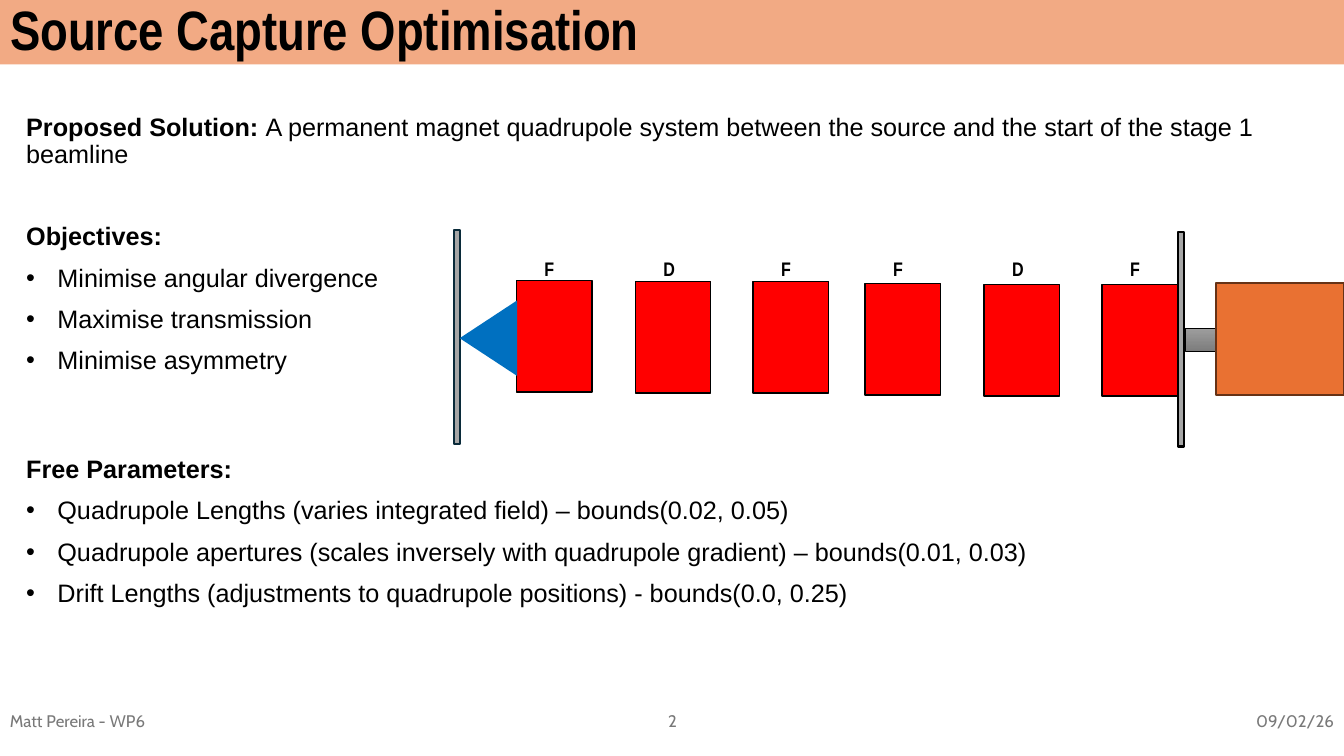
from dataclasses import dataclass
from typing import Any

import pptx
import pptx.dml.color
import pptx.enum.shapes
import pptx.enum.text
import pptx.oxml
import pptx.oxml.ns
import pptx.util

Inches = pptx.util.Inches
Pt = pptx.util.Pt
ALIGN = pptx.enum.text.PP_ALIGN
ANCHOR = pptx.enum.text.MSO_ANCHOR
SHAPE = pptx.enum.shapes.MSO_SHAPE


@dataclass(frozen=True)
class Theme:
    band: str = "F2AA84"
    ink: str = "000000"
    muted: str = "797979"
    magnet: str = "FF0000"
    beam: str = "0070C0"
    screen: str = "A6A6A6"
    screen_edge: str = "092A39"
    stage: str = "E97132"
    stage_edge: str = "663216"
    pipe: tuple[str, str] = ("9D9D9D", "7C7C7C")
    body_font: str = "Arial"
    narrow_font: str = "Arial Narrow"
    footer_font: str = "Cabin"
    title_size: float = 39.6
    body_size: float = 18
    label_size: float = 14
    footer_size: float = 12


@dataclass(frozen=True)
class Frame:
    left: float
    top: float
    width: float
    height: float

    def lengths(self) -> list[int]:
        return [Inches(v) for v in (self.left, self.top, self.width, self.height)]


@dataclass(frozen=True)
class Part:
    frame: Frame
    fill: str | tuple[str, str]
    line: str | None = None
    weight: float = 1
    kind: Any = SHAPE.RECTANGLE
    rotation: float = 0


@dataclass(frozen=True)
class Magnet:
    label: str
    left: float
    top: float


@dataclass(frozen=True)
class Section:
    heading: str
    detail: str
    points: tuple[str, ...]
    gap: float


@dataclass(frozen=True)
class Footer:
    text: str
    frame: Frame
    align: Any


THEME = Theme()
TITLE_FRAME = Frame(0, 0, 13.33, 0.64)
BODY_FRAME = Frame(0.16, 1.09, 12.47, 5.31)
POINT_GAP = 10
POINT_INDENT = 0.31

SECTIONS = (
    Section("Proposed Solution: ",
            "A permanent magnet quadrupole system between the source and "
            "the start of the stage 1 beamline", (), 0),
    Section("Objectives:", "",
            ("Minimise angular divergence", "Maximise transmission",
             "Minimise asymmetry"), 39),
    Section("Free Parameters:", "",
            ("Quadrupole Lengths (varies integrated field) – bounds(0.02, 0.05)",
             "Quadrupole apertures (scales inversely with quadrupole gradient)"
             " – bounds(0.01, 0.03)",
             "Drift Lengths (adjustments to quadrupole positions)"
             " - bounds(0.0, 0.25)"), 58.5),
)
MAGNETS = (
    Magnet("F", 5.12, 2.78), Magnet("D", 6.3, 2.79), Magnet("F", 7.47, 2.79),
    Magnet("F", 8.58, 2.81), Magnet("D", 9.76, 2.82), Magnet("F", 10.93, 2.82),
)
SCREENS = (
    Part(Frame(4.5, 2.28, 0.06, 2.13), THEME.screen, THEME.screen_edge, 1.5),
    Part(Frame(11.68, 2.3, 0.06, 2.13), THEME.screen, THEME.ink, 1.5),
)
BEAM_AND_STAGE = (
    Part(Frame(4.47, 3.07, 0.75, 0.57), THEME.beam, kind=SHAPE.ISOSCELES_TRIANGLE,
         rotation=270),
    Part(Frame(11.76, 3.26, 0.49, 0.23), THEME.pipe, THEME.ink),
    Part(Frame(12.06, 2.81, 1.27, 1.11), THEME.stage, THEME.stage_edge, 1.5),
)
FOOTERS = (
    Footer("Matt Pereira - WP6", Frame(0, 6.95, 4.5, 0.4), ALIGN.LEFT),
    Footer("2", Frame(5.17, 6.95, 3, 0.4), ALIGN.CENTER),
    Footer("09/02/26", Frame(10.33, 6.95, 3, 0.4), ALIGN.RIGHT),
)


def rgb(value: str) -> pptx.dml.color.RGBColor:
    return pptx.dml.color.RGBColor.from_string(value)


def apply(target: Any, formats: dict[str, Any]) -> None:
    for name, value in formats.items():
        setattr(target, name, value)


def add_span(para: Any, text: str, font: str, size: float, bold: bool = False,
             color: str = THEME.ink) -> None:
    span = para.add_run()
    span.text = text
    apply(span.font, {"name": font, "size": Pt(size), "bold": bold})
    span.font.color.rgb = rgb(color)


def place(box: Any, frame: Frame) -> None:
    apply(box, dict(zip(("left", "top", "width", "height"), frame.lengths())))


def draw_part(page: Any, part: Part) -> Any:
    box = page.shapes.add_shape(part.kind, *part.frame.lengths())
    box.shadow.inherit = False
    box.rotation = part.rotation
    if isinstance(part.fill, tuple):
        box.fill.gradient()
        box.fill.gradient_angle = 270
        for stop, color in zip(box.fill.gradient_stops, part.fill):
            stop.color.rgb = rgb(color)
    else:
        box.fill.solid()
        box.fill.fore_color.rgb = rgb(part.fill)
    if part.line:
        box.line.color.rgb = rgb(part.line)
        box.line.width = Pt(part.weight)
    else:
        box.line.fill.background()
    return box


def set_bullet(para: Any, indent: float, mark: str) -> None:
    props = para._p.get_or_add_pPr()
    props.set("marL", str(Inches(indent)))
    props.set("indent", str(-Inches(indent)))
    tag = "a:buChar" if mark else "a:buNone"
    bullet = pptx.oxml.parse_xml(f"<{tag} {pptx.oxml.ns.nsdecls('a')}/>")
    if mark:
        bullet.set("char", mark)
    props.append(bullet)


def fill_title(page: Any) -> None:
    band = draw_part(page, Part(TITLE_FRAME, THEME.band))
    page.shapes._spTree.insert(2, band._element)
    box = page.shapes.title
    place(box, TITLE_FRAME)
    apply(box.text_frame, {"vertical_anchor": ANCHOR.MIDDLE, "word_wrap": True,
                           "auto_size": pptx.enum.text.MSO_AUTO_SIZE.NONE})
    para = box.text_frame.paragraphs[0]
    apply(para, {"alignment": ALIGN.LEFT, "line_spacing": 0.9})
    add_span(para, "Source Capture Optimisation", THEME.narrow_font,
             THEME.title_size, True)


def fill_body(page: Any) -> None:
    box = page.placeholders[1]
    place(box, BODY_FRAME)
    frame = box.text_frame
    apply(frame, {"vertical_anchor": ANCHOR.TOP, "word_wrap": True,
                  "auto_size": pptx.enum.text.MSO_AUTO_SIZE.NONE})
    for section in SECTIONS:
        para = frame.add_paragraph() if section.gap else frame.paragraphs[0]
        set_bullet(para, 0, "")
        apply(para, {"line_spacing": 0.9, "space_before": Pt(section.gap)})
        add_span(para, section.heading, THEME.body_font, THEME.body_size, True)
        if section.detail:
            add_span(para, section.detail, THEME.body_font, THEME.body_size)
        for point in section.points:
            para = frame.add_paragraph()
            set_bullet(para, POINT_INDENT, "•")
            apply(para, {"line_spacing": 0.9, "space_before": Pt(POINT_GAP)})
            add_span(para, point, THEME.body_font, THEME.body_size)


def draw_beamline(page: Any) -> None:
    magnets = [Part(Frame(m.left, m.top, 0.75, 1.11), THEME.magnet, THEME.ink)
               for m in MAGNETS]
    for part in (*SCREENS, *magnets, *BEAM_AND_STAGE):
        draw_part(page, part)
    for magnet in MAGNETS:
        box = page.shapes.add_textbox(
            *Frame(magnet.left + 0.18, 2.5, 0.31, 0.34).lengths())
        box.text_frame.word_wrap = False
        add_span(box.text_frame.paragraphs[0], magnet.label, THEME.narrow_font,
                 THEME.label_size, True)


def draw_footers(page: Any) -> None:
    for footer in FOOTERS:
        box = page.shapes.add_textbox(*footer.frame.lengths())
        apply(box.text_frame, {"vertical_anchor": ANCHOR.MIDDLE, "word_wrap": True})
        para = box.text_frame.paragraphs[0]
        para.alignment = footer.align
        add_span(para, footer.text, THEME.footer_font, THEME.footer_size,
                 color=THEME.muted)


def main() -> None:
    deck = pptx.Presentation()
    apply(deck, {"slide_width": Inches(13.33), "slide_height": Inches(7.5)})
    page = deck.slides.add_slide(deck.slide_layouts[1])
    # Heading and text
    fill_title(page)
    fill_body(page)
    # Diagram and footer
    draw_beamline(page)
    draw_footers(page)
    deck.save("out.pptx")


if __name__ == "__main__":
    main()
